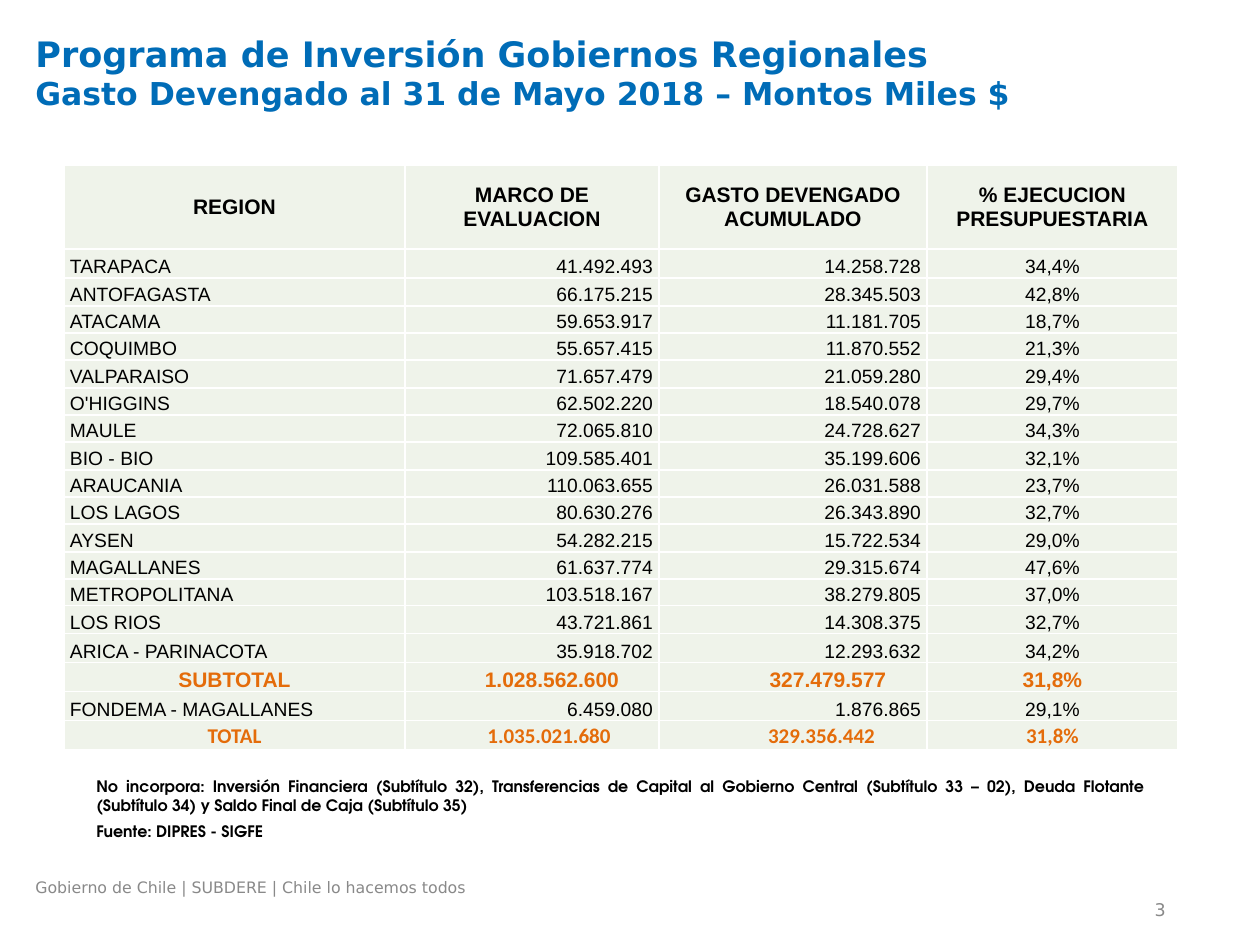
from dataclasses import dataclass

from lxml.etree import SubElement
from pptx import Presentation
from pptx.dml.color import RGBColor
from pptx.enum.text import MSO_ANCHOR, PP_ALIGN
from pptx.oxml.ns import qn
from pptx.util import Emu, Pt

PX = 914400 / 126  # EMU in one px
LEFT, MID, RIGHT, JUST = (
    PP_ALIGN.LEFT, PP_ALIGN.CENTER, PP_ALIGN.RIGHT, PP_ALIGN.JUSTIFY)


@dataclass(frozen=True)
class Theme:
    blue: str = "006CB7"
    gray: str = "898989"
    black: str = "000000"
    orange: str = "E46C0A"
    fill: str = "EFF3EA"
    rule: str = "FFFFFF"
    sans: str = "DejaVu Sans"
    note: str = "TeX Gyre Adventor"
    body: str = "Arial"
    total: str = "Calibri"
    title_size: int = 20
    sub_size: int = 18
    head_size: int = 12
    row_size: int = 11
    page_size: int = 10
    small_size: int = 9


T = Theme()

TITLE = ("Programa de Inversión Gobiernos Regionales\v"
         "Gasto Devengado al 31 de Mayo 2018 – Montos Miles $")
NOTES = (
    "No incorpora: Inversión Financiera (Subtítulo 32), Transferencias de "
    "Capital al Gobierno Central (Subtítulo 33 – 02), Deuda Flotante "
    "(Subtítulo 34) y Saldo Final de Caja (Subtítulo 35)\n"
    "Fuente: DIPRES - SIGFE")
HEAD = ("REGION", "MARCO DE EVALUACION", "GASTO DEVENGADO ACUMULADO",
        "% EJECUCION PRESUPUESTARIA")
REGIONS = [
    ("TARAPACA", "41.492.493", "14.258.728", "34,4%"),
    ("ANTOFAGASTA", "66.175.215", "28.345.503", "42,8%"),
    ("ATACAMA", "59.653.917", "11.181.705", "18,7%"),
    ("COQUIMBO", "55.657.415", "11.870.552", "21,3%"),
    ("VALPARAISO", "71.657.479", "21.059.280", "29,4%"),
    ("O'HIGGINS", "62.502.220", "18.540.078", "29,7%"),
    ("MAULE", "72.065.810", "24.728.627", "34,3%"),
    ("BIO - BIO", "109.585.401", "35.199.606", "32,1%"),
    ("ARAUCANIA", "110.063.655", "26.031.588", "23,7%"),
    ("LOS LAGOS", "80.630.276", "26.343.890", "32,7%"),
    ("AYSEN", "54.282.215", "15.722.534", "29,0%"),
    ("MAGALLANES", "61.637.774", "29.315.674", "47,6%"),
    ("METROPOLITANA", "103.518.167", "38.279.805", "37,0%"),
    ("LOS RIOS", "43.721.861", "14.308.375", "32,7%"),
    ("ARICA - PARINACOTA", "35.918.702", "12.293.632", "34,2%"),
]
SUBTOTAL = ("SUBTOTAL", "1.028.562.600", "327.479.577", "31,8%")
FONDEMA = ("FONDEMA - MAGALLANES", "6.459.080", "1.876.865", "29,1%")
TOTAL = ("TOTAL", "1.035.021.680", "329.356.442", "31,8%")

COLS = (341, 254, 268, 251)
# Header, first region, thirteen even rows, then the closing rows
ROWS = [84, 29] + [28 if i % 3 == 0 else 27 for i in range(13)] + [29] * 4
PAD = 6  # keeps text clear of the cell sides


def px(count):
    return Emu(round(count * PX))


def style(para, font, size, color, bold=False, align=LEFT):
    """Format a paragraph and all its runs."""
    para.alignment = align
    for run in para.runs:
        run.font.name = font
        run.font.size = Pt(size)
        run.font.bold = bold
        run.font.color.rgb = RGBColor.from_string(color)


def add_text(slide, box, text, font, size, color, bold=False, align=LEFT,
             anchor=MSO_ANCHOR.TOP):
    frame = slide.shapes.add_textbox(*map(px, box)).text_frame
    frame.word_wrap = True
    frame.vertical_anchor = anchor
    frame.text = text
    for para in frame.paragraphs:
        style(para, font, size, color, bold, align)
    return frame


def set_rules(cell):
    """Draw a thin line on all four sides of a cell."""
    props = cell._tc.get_or_add_tcPr()
    for spot, side in enumerate(("a:lnL", "a:lnR", "a:lnT", "a:lnB")):
        line = SubElement(props, qn(side), w=str(Pt(1)))
        props.insert(spot, line)
        fill = SubElement(line, qn("a:solidFill"))
        SubElement(fill, qn("a:srgbClr"), val=T.rule)


def fill_row(row, texts, font, size, color, bold, aligns,
             anchor=MSO_ANCHOR.BOTTOM, shifts=(0, 0, 0, 0)):
    for cell, text, align, shift in zip(row.cells, texts, aligns, shifts):
        cell.margin_left = px(PAD + shift)
        cell.margin_right = px(PAD)
        cell.margin_top = cell.margin_bottom = 0
        cell.vertical_anchor = anchor
        cell.fill.solid()
        cell.fill.fore_color.rgb = RGBColor.from_string(T.fill)
        set_rules(cell)
        cell.text_frame.text = text
        style(cell.text_frame.paragraphs[0], font, size, color, bold, align)


def add_grid(slide):
    box = (64, 165, sum(COLS), sum(ROWS))
    grid = slide.shapes.add_table(len(ROWS), len(COLS), *map(px, box)).table
    grid.first_row = grid.horz_banding = False
    for col, width in zip(grid.columns, COLS):
        col.width = px(width)
    for row, height in zip(grid.rows, ROWS):
        row.height = px(height)

    rows = list(grid.rows)
    mids = [MID] * len(COLS)
    sides = (LEFT, RIGHT, RIGHT, MID)
    fill_row(rows[0], HEAD, T.body, T.head_size, T.black, True, mids,
             MSO_ANCHOR.MIDDLE)
    plain = rows[1:-3] + [rows[-2]]
    for row, texts in zip(plain, REGIONS + [FONDEMA]):
        fill_row(row, texts, T.body, T.row_size, T.black, False, sides)
    # Sums sit a little right of their column centres
    fill_row(rows[-3], SUBTOTAL, T.body, T.head_size, T.orange, True, mids,
             shifts=(0, 40, 70, 0))
    fill_row(rows[-1], TOTAL, T.total, T.head_size, T.orange, True, mids,
             shifts=(0, 34, 57, 0))


def main():
    deck = Presentation()
    deck.slide_width, deck.slide_height = px(1260), px(945)
    slide = deck.slides.add_slide(deck.slide_layouts[6])

    # Title
    title = add_text(slide, (23, 26, 1212, 118), TITLE, T.sans, T.title_size,
                     T.blue, True)
    title.paragraphs[0].runs[1].font.size = Pt(T.sub_size)

    # Spending by region
    add_grid(slide)

    # Notes and source
    notes = add_text(slide, (84, 771, 1072, 79), NOTES, T.note, T.small_size,
                     T.black, True, JUST)
    source = notes.paragraphs[1]
    source.alignment = LEFT
    source.space_before = Pt(4)

    # Footer and page number
    add_text(slide, (23, 872, 816, 34),
             "Gobierno de Chile | SUBDERE | Chile lo hacemos todos",
             T.sans, T.small_size, T.gray)
    add_text(slide, (885, 897, 293, 26), "3", T.sans, T.page_size, T.gray,
             align=RIGHT, anchor=MSO_ANCHOR.MIDDLE)

    deck.save("out.pptx")


if __name__ == "__main__":
    main()
